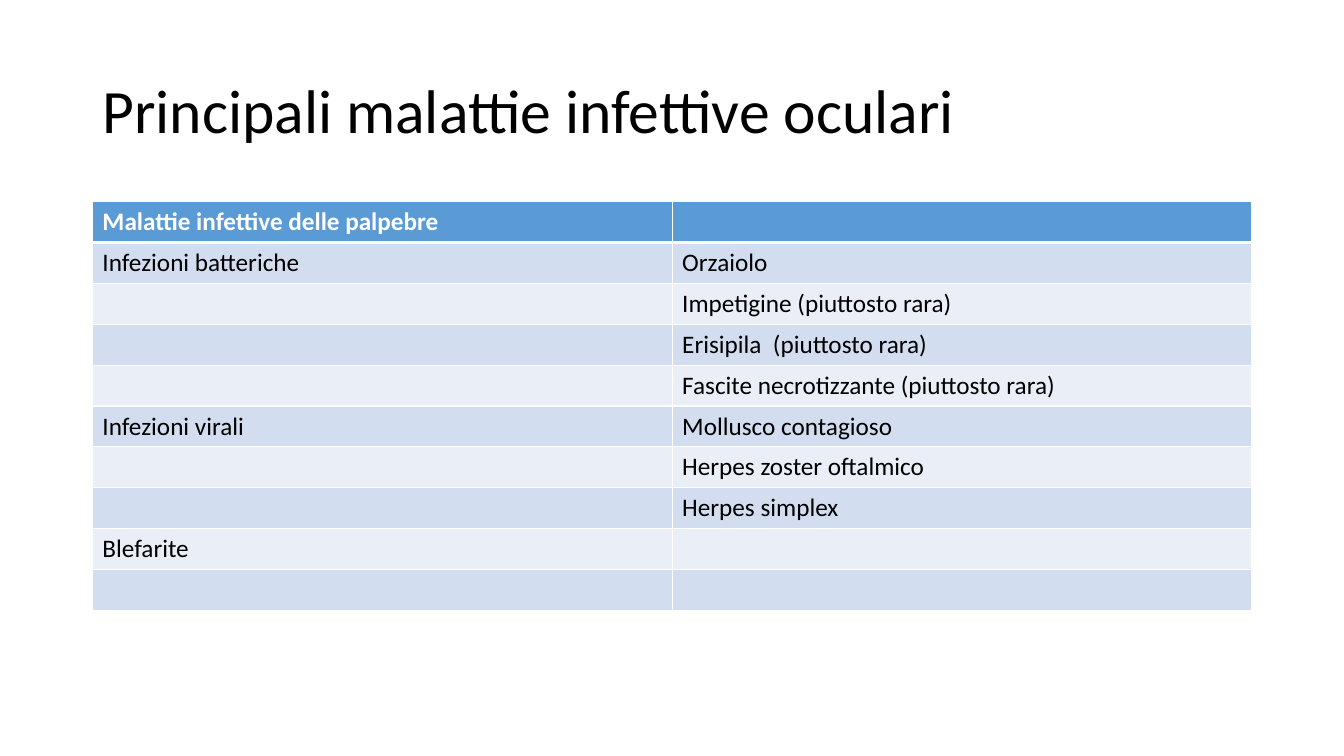
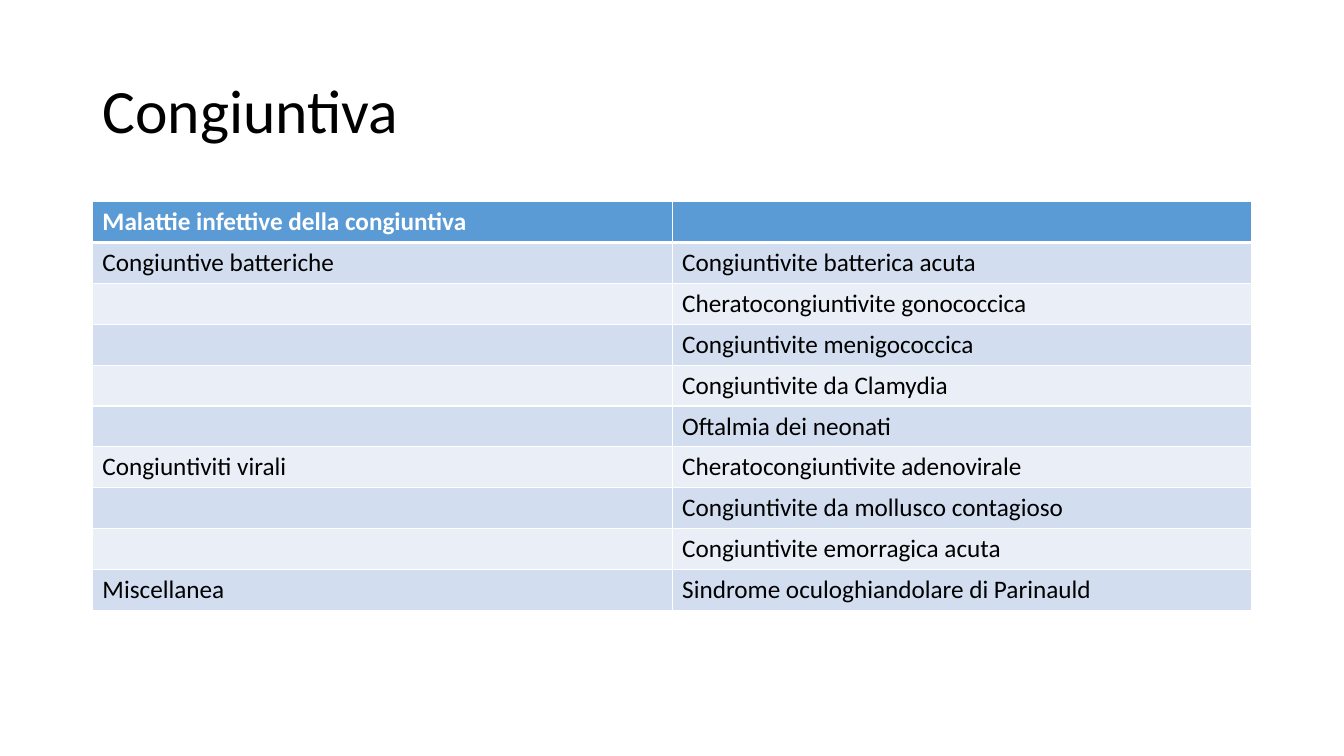
from lxml.etree import SubElement
from pptx import Presentation
from pptx.dml.color import RGBColor
from pptx.enum.text import MSO_ANCHOR as Anchor, MSO_AUTO_SIZE as AutoSize, PP_ALIGN as Align
from pptx.oxml.ns import qn
from pptx.util import Inches, Pt

COLORS = {
    "text": "000000",
    "white": "FFFFFF",
    "header": "5B9BD5",
    "odd": "D2DEEF",
    "even": "EAEFF7",
}
FONT = "Calibri"
UNIT = Inches(1) / 12
TITLE_ONLY = 5
MARGIN, CONTENT_WIDTH = 11, 138
TITLE_TOP, TITLE_HEIGHT = 4.8, 17.4
TABLE_TOP, ROW_HEIGHT = 24, 4.87

EYELIDS = [
    ("Malattie infettive delle palpebre", ""),
    ("Infezioni batteriche", "Orzaiolo"),
    ("", "Impetigine (piuttosto rara)"),
    ("", "Erisipila  (piuttosto rara)"),
    ("", "Fascite necrotizzante (piuttosto rara)"),
    ("Infezioni virali", "Mollusco contagioso"),
    ("", "Herpes zoster oftalmico"),
    ("", "Herpes simplex"),
    ("Blefarite", ""),
    ("", ""),
]
CONJUNCTIVA = [
    ("Malattie infettive della congiuntiva", ""),
    ("Congiuntive batteriche", "Congiuntivite batterica acuta"),
    ("", "Cheratocongiuntivite gonococcica"),
    ("", "Congiuntivite menigococcica"),
    ("", "Congiuntivite da Clamydia"),
    ("", "Oftalmia dei neonati"),
    ("Congiuntiviti virali", "Cheratocongiuntivite adenovirale"),
    ("", "Congiuntivite da mollusco contagioso"),
    ("", "Congiuntivite emorragica acuta"),
    ("Miscellanea", "Sindrome oculoghiandolare di Parinauld"),
]


def grid(count):
    return round(count * UNIT)


class Deck:
    """Builds titled slides with banded tables on a grid of twelfths of an inch."""

    def __init__(self):
        self.presentation = Presentation()
        self.presentation.slide_width = Inches(13.33)
        self.presentation.slide_height = Inches(7.5)
        self.slide = None

    def add_slide(self, title):
        layout = self.presentation.slide_layouts[TITLE_ONLY]
        self.slide = self.presentation.slides.add_slide(layout)
        shape = self.slide.shapes.title
        shape.left, shape.top = grid(MARGIN), grid(TITLE_TOP)
        shape.width, shape.height = grid(CONTENT_WIDTH), grid(TITLE_HEIGHT)
        frame = shape.text_frame
        frame.text = title
        frame.word_wrap = True
        frame.auto_size = AutoSize.NONE
        frame.vertical_anchor = Anchor.MIDDLE
        paragraph = frame.paragraphs[0]
        paragraph.alignment = Align.LEFT
        paragraph.line_spacing = 0.9
        self.format_runs(paragraph, 44, "text")

    def format_runs(self, paragraph, size, color, bold=False):
        for run in paragraph.runs:
            run.font.name = FONT
            run.font.size = Pt(size)
            run.font.bold = bold
            run.font.color.rgb = RGBColor.from_string(COLORS[color])

    def add_table(self, rows):
        columns = len(rows[0])
        table = self.slide.shapes.add_table(
            len(rows), columns, grid(MARGIN), grid(TABLE_TOP),
            grid(CONTENT_WIDTH), grid(ROW_HEIGHT * len(rows)),
        ).table
        for column in table.columns:
            column.width = grid(CONTENT_WIDTH / columns)
        for index, texts in enumerate(rows):
            table.rows[index].height = grid(ROW_HEIGHT)
            for column, text in enumerate(texts):
                self.fill_cell(table.cell(index, column), text, index)

    def fill_cell(self, cell, text, index):
        header = index == 0
        self.add_borders(cell, top=3 if index == 1 else 1, bottom=3 if header else 1)
        band = "header" if header else "odd" if index % 2 else "even"
        cell.fill.solid()
        cell.fill.fore_color.rgb = RGBColor.from_string(COLORS[band])
        cell.text_frame.text = text
        color = "white" if header else "text"
        self.format_runs(cell.text_frame.paragraphs[0], 18, color, bold=header)

    def add_borders(self, cell, top, bottom):
        properties = cell._tc.get_or_add_tcPr()
        for side, width in (("L", 1), ("R", 1), ("T", top), ("B", bottom)):
            line = SubElement(properties, qn(f"a:ln{side}"), w=str(Pt(width)))
            fill = SubElement(line, qn("a:solidFill"))
            SubElement(fill, qn("a:srgbClr"), val=COLORS["white"])


def main():
    deck = Deck()
    for title, rows in (
        ("Principali malattie infettive oculari", EYELIDS),
        ("Congiuntiva", CONJUNCTIVA),
    ):
        deck.add_slide(title)
        deck.add_table(rows)
    deck.presentation.save("out.pptx")


if __name__ == "__main__":
    main()
